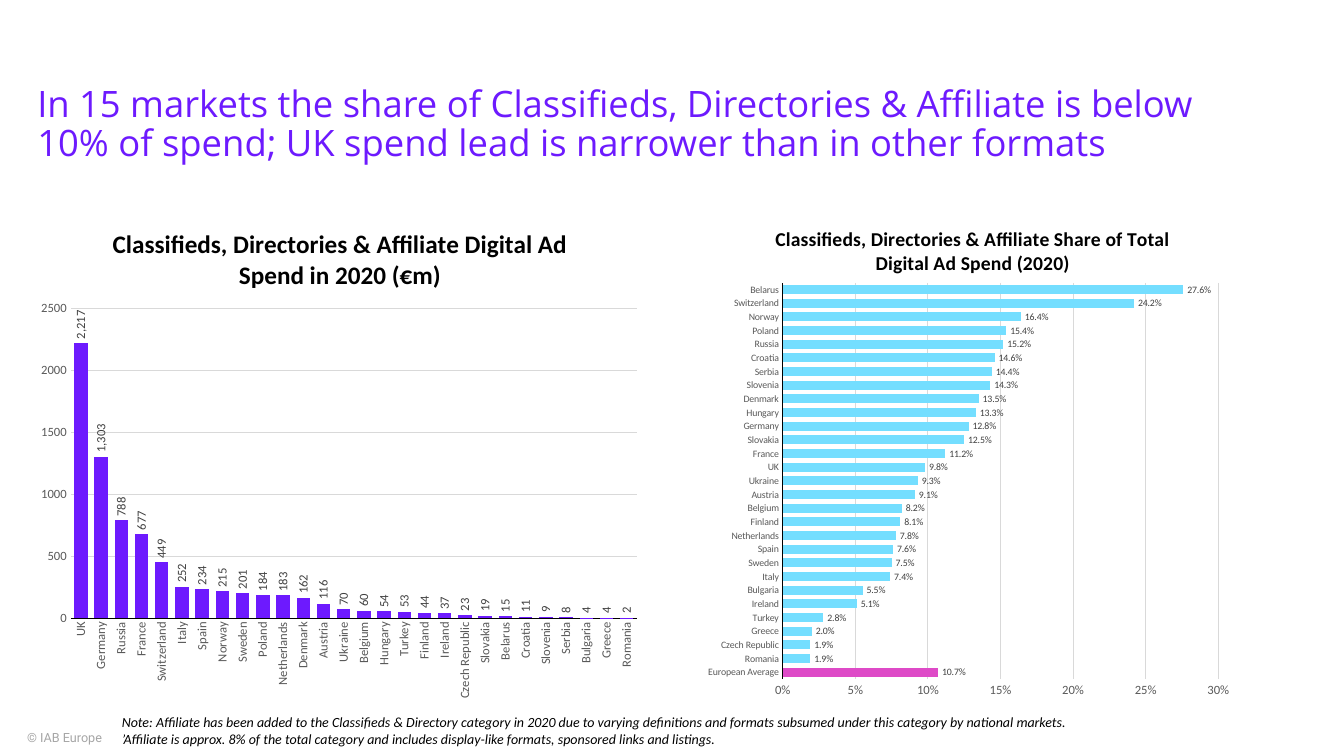
from dataclasses import dataclass

from pptx import Presentation
from pptx.chart.data import CategoryChartData
from pptx.dml.color import RGBColor
from pptx.enum.chart import XL_CHART_TYPE, XL_LABEL_POSITION, XL_TICK_MARK
from pptx.enum.text import MSO_ANCHOR, MSO_AUTO_SIZE, PP_ALIGN
from pptx.oxml import parse_xml
from pptx.oxml.ns import nsdecls, qn
from pptx.util import Inches, Pt


@dataclass(frozen=True)
class Theme:
    """Colours, fonts and type sizes of the slide."""
    purple: str = "6D1AFE"
    sky: str = "74DEFF"
    pink: str = "DE4AC7"
    black: str = "000000"
    axis_text: str = "595959"
    label_text: str = "404040"
    footer_text: str = "A6A6A6"
    grid: str = "D9D9D9"
    title_font: str = "Open Sans"
    body_font: str = "Calibri"
    footer_font: str = "Roboto"
    title_size: int = 26
    spend_title_size: int = 18
    share_title_size: int = 14
    base_size: int = 10
    small_size: int = 9
    tiny_size: int = 7


THEME = Theme()

SPEND = {
    "UK": 2217, "Germany": 1303, "Russia": 788, "France": 677,
    "Switzerland": 449, "Italy": 252, "Spain": 234, "Norway": 215,
    "Sweden": 201, "Poland": 184, "Netherlands": 183, "Denmark": 162,
    "Austria": 116, "Ukraine": 70, "Belgium": 60, "Hungary": 54,
    "Turkey": 53, "Finland": 44, "Ireland": 37, "Czech Republic": 23,
    "Slovakia": 19, "Belarus": 15, "Croatia": 11, "Slovenia": 9,
    "Serbia": 8, "Bulgaria": 4, "Greece": 4, "Romania": 2,
}
SHARE = {
    "European Average": 0.107, "Romania": 0.019, "Czech Republic": 0.019,
    "Greece": 0.02, "Turkey": 0.028, "Ireland": 0.051, "Bulgaria": 0.055,
    "Italy": 0.074, "Sweden": 0.075, "Spain": 0.076, "Netherlands": 0.078,
    "Finland": 0.081, "Belgium": 0.082, "Austria": 0.091, "Ukraine": 0.093,
    "UK": 0.098, "France": 0.112, "Slovakia": 0.125, "Germany": 0.128,
    "Hungary": 0.133, "Denmark": 0.135, "Slovenia": 0.143, "Serbia": 0.144,
    "Croatia": 0.146, "Russia": 0.152, "Poland": 0.154, "Norway": 0.164,
    "Switzerland": 0.242, "Belarus": 0.276,
}


def style_font(font, size, color, name=THEME.body_font, bold=False, italic=False):
    """Apply size, colour, family and emphasis to a font."""
    font.size, font.name = Pt(size), name
    font.bold, font.italic = bold, italic
    font.color.rgb = RGBColor.from_string(color)


def style_line(line, color):
    """Give a line the thin chart weight and a colour."""
    line.color.rgb = RGBColor.from_string(color)
    line.width = Pt(0.75)


def fill_solid(fill, color):
    """Fill with one colour."""
    fill.solid()
    fill.fore_color.rgb = RGBColor.from_string(color)


def build_layout(x, y, size=None):
    """Return a manual chart layout in fractions of the chart area."""
    target = '<c:layoutTarget val="inner"/>' if size else ""
    extent = f'<c:w val="{size[0]}"/><c:h val="{size[1]}"/>' if size else ""
    return parse_xml(
        f'<c:layout {nsdecls("c")}><c:manualLayout>{target}'
        f'<c:xMode val="edge"/><c:yMode val="edge"/>'
        f'<c:x val="{x}"/><c:y val="{y}"/>{extent}</c:manualLayout></c:layout>')


def place_chart_parts(chart, title_at, plot_at, plot_size):
    """Fix the positions of the chart title and the plot area."""
    title, plot_area = chart._chartSpace.xpath("c:chart/c:title | c:chart/c:plotArea")
    for part in (title, plot_area):
        for old_layout in part.findall(qn("c:layout")):
            part.remove(old_layout)
    title.find(qn("c:tx")).addnext(build_layout(*title_at))
    plot_area.insert(0, build_layout(*plot_at, plot_size))


def turn_upright(owner):
    """Turn axis or data label text to read upwards."""
    body = owner._element.find(qn("c:txPr")).find(qn("a:bodyPr"))
    body.set("rot", "-5400000")
    body.set("vert", "horz")


def style_axes(chart, category_size, maximum, step, number_format):
    """Format the category axis, the value axis and its gridlines."""
    categories, values = chart.category_axis, chart.value_axis
    for axis, size in ((categories, category_size), (values, THEME.small_size)):
        axis.major_tick_mark = axis.minor_tick_mark = XL_TICK_MARK.NONE
        style_font(axis.tick_labels.font, size, THEME.axis_text)
    categories.has_major_gridlines = False
    style_line(categories.format.line, THEME.black)
    values.minimum_scale, values.maximum_scale = 0, maximum
    values.major_unit = step
    values.tick_labels.number_format = number_format
    values.tick_labels.number_format_is_linked = False
    values.format.line.fill.background()
    values.has_major_gridlines = True
    style_line(values.major_gridlines.format.line, THEME.grid)


def add_bar_chart(slide, kind, box, data, title, title_size, color,
                  label_size, label_format):
    """Add a one-series bar chart with title and data labels."""
    chart_data = CategoryChartData()
    chart_data.categories = list(data)
    chart_data.add_series("Series 1", list(data.values()))
    chart = slide.shapes.add_chart(kind, *map(Inches, box), chart_data).chart
    style_font(chart.font, THEME.base_size, THEME.black)
    chart.has_legend = False
    chart.has_title = True
    heading = chart.chart_title.text_frame
    heading.text = title
    style_font(heading.paragraphs[0].runs[0].font, title_size, THEME.black, bold=True)
    bars = chart.plots[0]
    bars.gap_width = 50
    bars.vary_by_categories = False
    fill_solid(bars.series[0].format.fill, color)
    bars.has_data_labels = True
    labels = bars.data_labels
    labels.show_value = True
    labels.number_format = label_format
    labels.number_format_is_linked = False
    labels.position = XL_LABEL_POSITION.OUTSIDE_END
    style_font(labels.font, label_size, THEME.label_text)
    return chart


def add_spend_chart(slide):
    """Add the column chart of spend by market."""
    chart = add_bar_chart(
        slide, XL_CHART_TYPE.COLUMN_CLUSTERED, (0.27, 2, 6.17, 5.04), SPEND,
        "Classifieds, Directories & Affiliate Digital Ad Spend in 2020 (€m)",
        THEME.spend_title_size, THEME.purple, THEME.small_size, "#,##0")
    style_axes(chart, THEME.small_size, 2500, 500, "General")
    turn_upright(chart.category_axis)
    turn_upright(chart.plots[0].data_labels)
    place_chart_parts(chart, (0.13, 0.04), (0.07, 0.21), (0.91, 0.61))


def add_share_chart(slide):
    """Add the bar chart of spend share with the average highlighted."""
    chart = add_bar_chart(
        slide, XL_CHART_TYPE.BAR_CLUSTERED, (6.9, 2, 5.4, 5.04), SHARE,
        "Classifieds, Directories & Affiliate Share of Total Digital Ad Spend (2020)",
        THEME.share_title_size, THEME.sky, THEME.tiny_size, "0.0%")
    style_axes(chart, THEME.tiny_size, 0.3, 0.05, "0%")
    average = chart.plots[0].series[0].points[0]
    fill_solid(average.format.fill, THEME.pink)
    place_chart_parts(chart, (0.14, 0.04), (0.16, 0.16), (0.8, 0.78))


def add_text(slide, box, lines, **font_style):
    """Add a wrapped text box with one paragraph per line."""
    frame = slide.shapes.add_textbox(*map(Inches, box)).text_frame
    frame.word_wrap = True
    frame.text = "\n".join(lines)
    for paragraph in frame.paragraphs:
        style_font(paragraph.runs[0].font, **font_style)


def set_title(slide, text):
    """Place and format the slide title."""
    title = slide.shapes.title
    title.left, title.top, title.width, title.height = map(
        Inches, (0.27, 0.74, 12.15, 1.01))
    frame = title.text_frame
    frame.text = text
    frame.word_wrap = True
    frame.auto_size = MSO_AUTO_SIZE.NONE
    frame.vertical_anchor = MSO_ANCHOR.MIDDLE
    paragraph = frame.paragraphs[0]
    paragraph.alignment, paragraph.line_spacing = PP_ALIGN.LEFT, 0.9
    style_font(paragraph.runs[0].font, THEME.title_size, THEME.purple, THEME.title_font)


def main():
    """Build and save the slide."""
    deck = Presentation()
    deck.slide_width, deck.slide_height = Inches(13.33), Inches(7.5)
    slide = deck.slides.add_slide(deck.slide_layouts[5])
    set_title(slide, "In 15 markets the share of Classifieds, Directories & Affiliate "
                     "is below 10% of spend; UK spend lead is narrower than in other formats")
    add_text(slide, (0.17, 7.19, 3.61, 0.25), ["© IAB Europe"],
             size=THEME.small_size, color=THEME.footer_text, name=THEME.footer_font)
    add_spend_chart(slide)
    add_share_chart(slide)
    add_text(slide, (1.11, 7.03, 10.65, 0.44), [
        "Note: Affiliate has been added to the Classifieds & Directory category in 2020 due to "
        "varying definitions and formats subsumed under this category by national markets.",
        "’Affiliate is approx. 8% of the total category and includes display-like formats, "
        "sponsored links and listings.",
    ], size=THEME.base_size, color=THEME.black, italic=True)
    deck.save("out.pptx")


if __name__ == "__main__":
    main()
